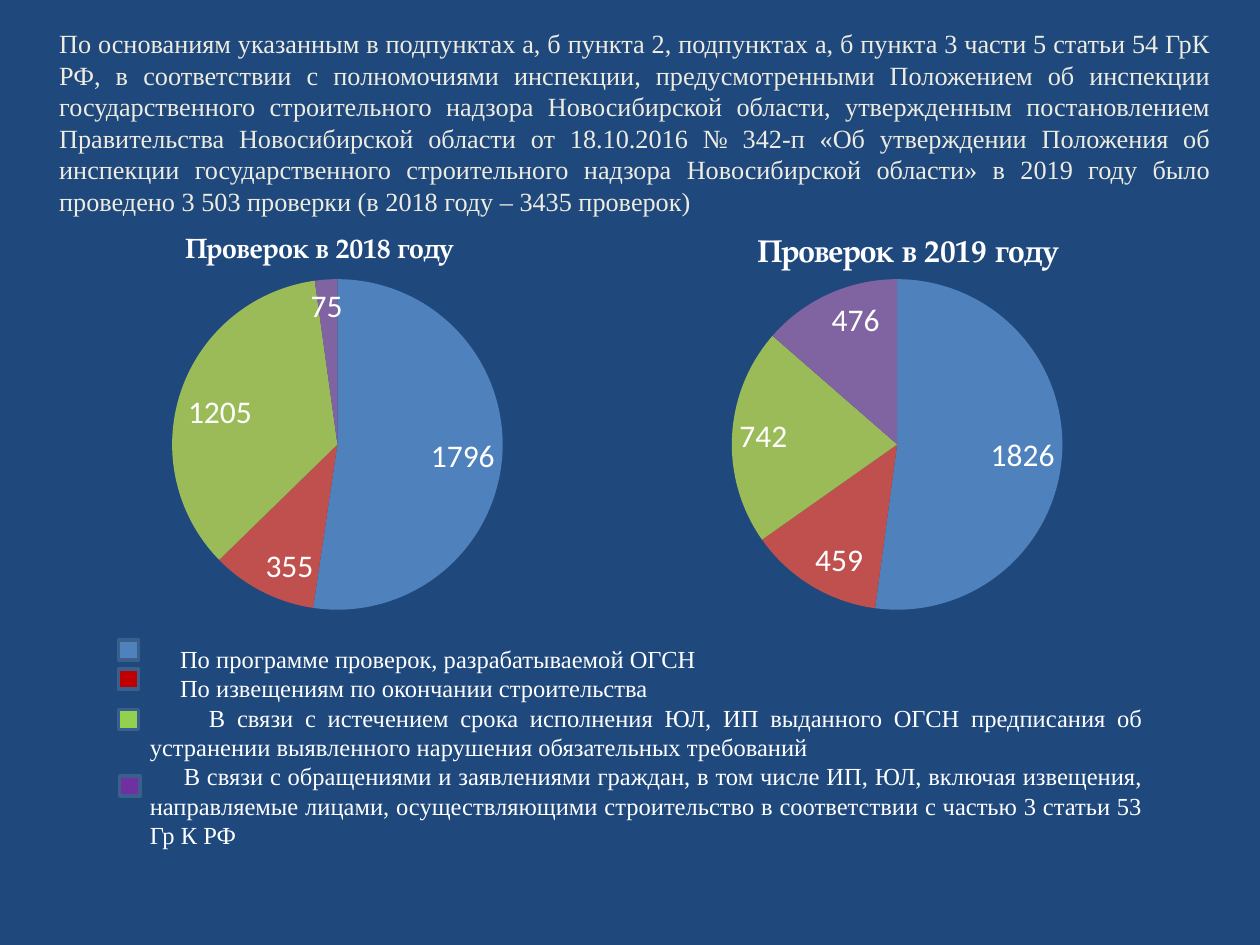
from lxml import etree
from pptx import Presentation
from pptx.chart.data import CategoryChartData
from pptx.dml.color import RGBColor
from pptx.enum.chart import XL_CHART_TYPE, XL_LABEL_POSITION
from pptx.enum.shapes import MSO_SHAPE
from pptx.enum.text import MSO_ANCHOR, PP_ALIGN
from pptx.oxml import parse_xml
from pptx.oxml.ns import qn
from pptx.util import Inches, Pt

PIE = XL_CHART_TYPE.PIE
INSIDE = XL_LABEL_POSITION.INSIDE_END
RECT = MSO_SHAPE.RECTANGLE
TOP, BOTTOM = MSO_ANCHOR.TOP, MSO_ANCHOR.BOTTOM
JUST = PP_ALIGN.JUSTIFY
NS = "http://schemas.openxmlformats.org/drawingml/2006/chart"


def color(code):
    return RGBColor.from_string(code)


def write(box, lines, size=14, fill="FFFFFF", anchor=TOP, indents=(0,)):
    frame = box.text_frame
    frame.word_wrap = True
    frame.vertical_anchor = anchor
    for i, (line, indent) in enumerate(zip(lines, indents)):
        para = frame.paragraphs[0] if i == 0 else frame.add_paragraph()
        para.alignment = JUST
        para._p.get_or_add_pPr().set("indent", str(Inches(indent)))
        run = para.add_run()
        run.text = line
        run.font.size = Pt(size)
        run.font.name = "Times New Roman"
        run.font.color.rgb = color(fill)
    return frame


deck = Presentation()
deck.slide_width, deck.slide_height = Inches(10), Inches(7.5)
slide = deck.slides.add_slide(deck.slide_layouts[6])
slide.background.fill.solid()
slide.background.fill.fore_color.rgb = color("1F497D")
shapes = slide.shapes

intro = (
    "По основаниям указанным в подпунктах а, б пункта 2, подпунктах а, б пункта 3 части 5 статьи 54 ГрК РФ, "
    "в соответствии с полномочиями инспекции, предусмотренными Положением об инспекции государственного "
    "строительного надзора Новосибирской области, утвержденным постановлением Правительства Новосибирской "
    "области от 18.10.2016 № 342-п «Об утверждении Положения об инспекции государственного строительного "
    "надзора Новосибирской области» в 2019 году было проведено 3 503 проверки (в 2018 году – 3435 проверок)"
)
box = shapes.add_textbox(Inches(0.47), Inches(0.16), Inches(9.14), Inches(1.56))
frame = write(box, [intro], size=15, fill="EEECE1", anchor=BOTTOM)
frame.margin_left = frame.margin_right = frame.margin_bottom = 0

hues = ["4F81BD", "C0504D", "9BBB59", "8064A2"]
pies = [
    ("Проверок в 2018 году", 0.7, 4.3, 16, 0.17, [1796, 355, 1205, 75]),
    ("Проверок в 2019 году", 5, 4.61, 18, 0.21, [1826, 459, 742, 476]),
]
for name, left, width, size, shift, counts in pies:
    data = CategoryChartData()
    data.categories = ["1", "2", "3", "4"]
    data.add_series(name, counts)
    chart = shapes.add_chart(PIE, Inches(left), Inches(1.8), Inches(width), Inches(3.2), data).chart
    chart.has_legend = False
    chart.font.size = Pt(18)
    chart.font.color.rgb = color("FFFFFF")

    title = chart.chart_title
    run = title.text_frame.paragraphs[0].add_run()
    run.text = name
    run.font.name = "TeX Gyre Pagella"
    run.font.size = Pt(size)
    run.font.bold = True
    run.font.color.rgb = color("FFFFFF")
    title.include_in_layout = False

    plot = chart.plots[0]
    plot.vary_by_categories = True
    plot.has_data_labels = True
    labels = plot.data_labels
    labels.show_value = True
    labels.show_percentage = False
    labels.position = INSIDE
    labels.font.size = Pt(18)
    labels.font.color.rgb = color("FFFFFF")
    for i, hue in enumerate(hues):
        fill = plot.series[0].points[i].format.fill
        fill.solid()
        fill.fore_color.rgb = color(hue)

    area = chart._chartSpace.chart.plotArea
    spots = [
        (title._element, 1, {"xMode": "edge", "yMode": "edge", "x": shift, "y": 0.01}),
        (area, 0, {"layoutTarget": "inner", "xMode": "edge", "yMode": "edge",
                   "x": 0.03, "y": 0.13, "w": 0.86, "h": 0.82}),
    ]
    for host, place, rules in spots:
        for old in host.findall(qn("c:layout")):
            host.remove(old)
        layout = parse_xml(f'<c:layout xmlns:c="{NS}"><c:manualLayout/></c:layout>')
        for key, value in rules.items():
            etree.SubElement(layout[0], qn(f"c:{key}")).set("val", str(value))
        host.insert(place, layout)

notes = [
    "По программе проверок, разрабатываемой ОГСН",
    "По извещениям по окончании строительства",
    "В связи с истечением срока исполнения ЮЛ, ИП выданного ОГСН предписания об устранении выявленного "
    "нарушения обязательных требований",
    "В связи с обращениями и заявлениями граждан, в том числе ИП, ЮЛ, включая извещения, направляемые лицами, "
    "осуществляющими строительство в соответствии с частью 3 статьи 53 Гр К РФ",
]
box = shapes.add_textbox(Inches(1.09), Inches(5.06), Inches(8.08), Inches(1.75))
write(box, notes, indents=(0.24, 0.24, 0.47, 0.27))

keys = [(0.94, 5.08, "4F81BD"), (0.94, 5.31, "C00000"), (0.94, 5.63, "92D050"), (0.95, 6.16, "7030A0")]
for left, top, hue in keys:
    key = shapes.add_shape(RECT, Inches(left), Inches(top), Inches(0.16), Inches(0.16))
    key.shadow.inherit = False
    key.fill.solid()
    key.fill.fore_color.rgb = color(hue)
    key.line.color.rgb = color("3A5F8C")
    key.line.width = Pt(2)

deck.save("out.pptx")
